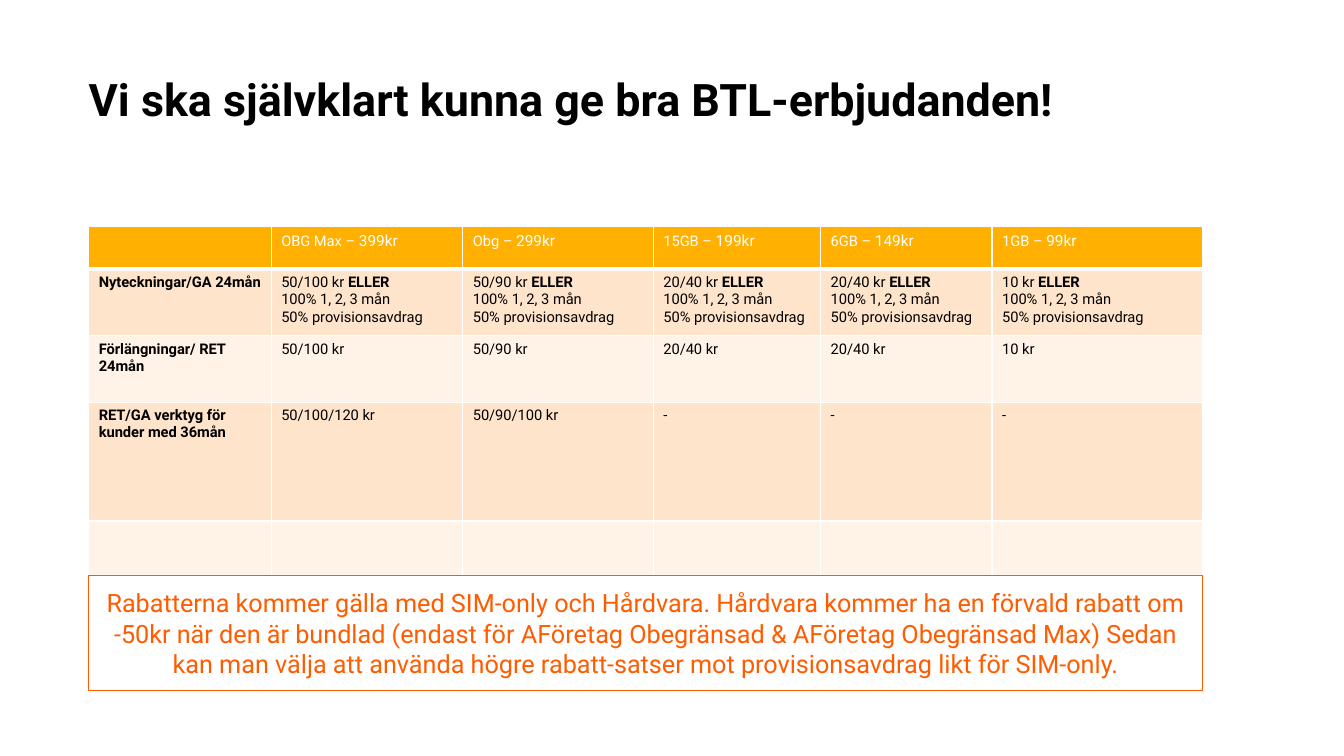
from lxml.etree import SubElement
from pptx import Presentation
from pptx.dml.color import RGBColor
from pptx.enum.shapes import MSO_SHAPE
from pptx.enum.text import MSO_ANCHOR, PP_ALIGN
from pptx.oxml.ns import qn
from pptx.util import Inches, Pt

FONT = "Roboto"
COLORS = {
    "black": "000000",
    "white": "FFFFFF",
    "header": "FFB000",
    "odd_row": "FFE4CC",
    "even_row": "FFF2E7",
    "accent": "FF5C00",
}
LEFT, CONTENT_WIDTH = 0.88, 11.05
COLUMN_WIDTHS = [1.81, 1.9, 1.89, 1.66, 1.7, 2.09]
ROW_HEIGHTS = [0.42, 0.66, 0.66, 1.18, 0.54]

PLANS = [("OBG Max", "399kr"), ("Obg", "299kr"), ("15GB", "199kr"),
         ("6GB", "149kr"), ("1GB", "99kr")]
NEW_DISCOUNTS = ["50/100 kr", "50/90 kr", "20/40 kr", "20/40 kr", "10 kr"]
ALTERNATIVES = ["100% 1, 2, 3 mån", "50% provisionsavdrag"]
TOOL_DISCOUNTS = ["50/100/120 kr", "50/90/100 kr", "-", "-", "-"]
NOTE = ("Rabatterna kommer gälla med SIM-only och Hårdvara. Hårdvara kommer ha en "
        "förvald rabatt om -50kr när den är bundlad (endast för AFöretag Obegränsad "
        "& AFöretag Obegränsad Max) Sedan kan man välja att använda högre "
        "rabatt-satser mot provisionsavdrag likt för SIM-only.")


def rgb(name):
    return RGBColor.from_string(COLORS[name])


def add_run(paragraph, text, size, color, bold=False):
    run = paragraph.add_run()
    run.text = text
    run.font.name = FONT
    run.font.size = Pt(size)
    run.font.bold = bold
    run.font.color.rgb = rgb(color)


def add_title(slide, left, top, width, height):
    title = slide.shapes.add_textbox(
        Inches(left), Inches(top), Inches(width), Inches(height)).text_frame
    title.word_wrap = True
    title.margin_left = title.margin_right = 0
    title.margin_top = title.margin_bottom = 0
    heading = title.paragraphs[0]
    heading.line_spacing = 0.9
    add_run(heading, "Vi ska självklart kunna ge bra BTL-erbjudanden!",
            32, "black", True)


def discount_rows():
    """Return rows of cells; a cell is a list of lines, a line a list of (text, size, bold)."""
    def label(text):
        return [[(text, 10.5, True)]]

    def plain(text):
        return [(text, 10.5, False)]

    header = [[]] + [[[(f"{plan} – ", 10.5, False), (price, 11, False)]]
                     for plan, price in PLANS]
    signups = [label("Nyteckningar/GA 24mån")] + [
        [plain(f"{discount} ") + [("ELLER", 10.5, True)]]
        + [plain(option) for option in ALTERNATIVES]
        for discount in NEW_DISCOUNTS]
    renewals = [label("Förlängningar/ RET 24mån")] + [
        [plain(discount)] for discount in NEW_DISCOUNTS]
    tools = [label("RET/GA verktyg för kunder med 36mån")] + [
        [plain(discount)] for discount in TOOL_DISCOUNTS]
    return [header, signups, renewals, tools, [[] for _ in COLUMN_WIDTHS]]


def set_borders(cell, top, bottom):
    """Draw white borders, with the top and bottom widths in points."""
    properties = cell._tc.get_or_add_tcPr()
    for side, width in (("L", 1), ("R", 1), ("T", top), ("B", bottom)):
        border = SubElement(properties, qn(f"a:ln{side}"), w=str(Pt(width)))
        fill = SubElement(border, qn("a:solidFill"))
        SubElement(fill, qn("a:srgbClr"), val=COLORS["white"])


def add_discount_table(slide, left, top, width, height):
    table = slide.shapes.add_table(
        len(ROW_HEIGHTS), len(COLUMN_WIDTHS),
        Inches(left), Inches(top), Inches(width), Inches(height)).table
    for column, column_width in zip(table.columns, COLUMN_WIDTHS):
        column.width = Inches(column_width)
    for row, row_height in zip(table.rows, ROW_HEIGHTS):
        row.height = Inches(row_height)

    for r, row in enumerate(discount_rows()):
        background = "header" if r == 0 else "odd_row" if r % 2 else "even_row"
        text_color = "white" if r == 0 else "black"
        for c, lines in enumerate(row):
            cell = table.cell(r, c)
            set_borders(cell, top=3 if r == 1 else 1, bottom=3 if r == 0 else 1)
            cell.fill.solid()
            cell.fill.fore_color.rgb = rgb(background)
            for i, line in enumerate(lines):
                frame = cell.text_frame
                paragraph = frame.add_paragraph() if i else frame.paragraphs[0]
                for text, size, bold in line:
                    add_run(paragraph, text, size, text_color, bold)


def add_note(slide, left, top, width, height):
    note = slide.shapes.add_shape(
        MSO_SHAPE.RECTANGLE,
        Inches(left), Inches(top), Inches(width), Inches(height))
    note.shadow.inherit = False
    note.fill.background()
    note.line.color.rgb = rgb("accent")
    note.line.width = Pt(1)
    note.text_frame.word_wrap = True
    note.text_frame.vertical_anchor = MSO_ANCHOR.MIDDLE
    paragraph = note.text_frame.paragraphs[0]
    paragraph.alignment = PP_ALIGN.CENTER
    add_run(paragraph, NOTE, 18, "accent")


def main():
    presentation = Presentation()
    presentation.slide_width = Inches(13.33)
    presentation.slide_height = Inches(7.5)
    slide = presentation.slides.add_slide(presentation.slide_layouts[6])
    table_top, table_height = 2.25, sum(ROW_HEIGHTS)
    add_title(slide, LEFT, 0.77, 11.58, 0.98)
    add_discount_table(slide, LEFT, table_top, CONTENT_WIDTH, table_height)
    add_note(slide, LEFT, table_top + table_height, CONTENT_WIDTH, 1.14)
    presentation.save("out.pptx")


if __name__ == "__main__":
    main()
